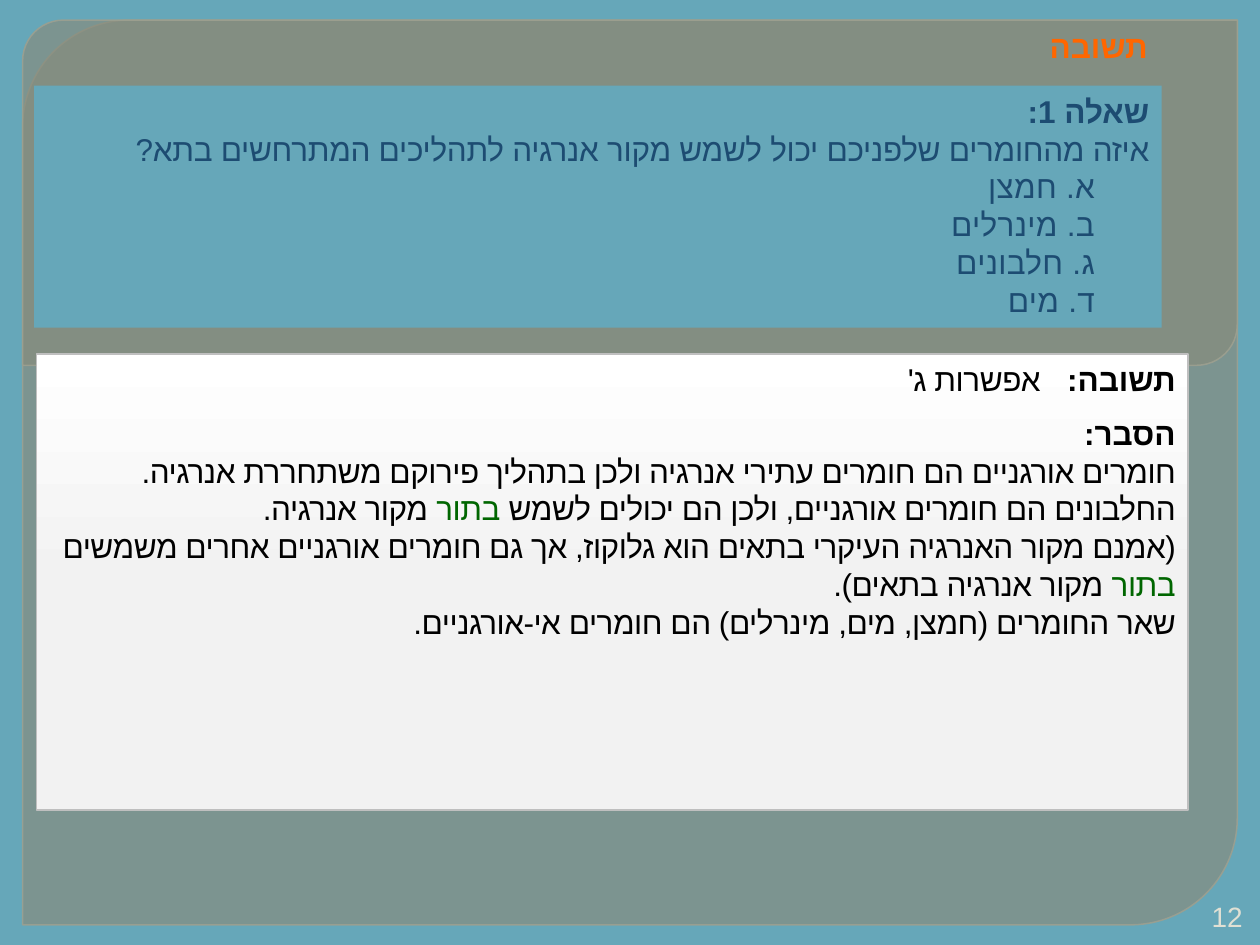
from lxml import etree
from pptx import Presentation
from pptx import util as u
from pptx.dml.color import RGBColor
from pptx.enum import shapes, text
from pptx.oxml.ns import qn

TEAL = RGBColor(0x66, 0xA7, 0xB9)
OLIVE = RGBColor(0x88, 0x8B, 0x7B)
EDGE = RGBColor(0x9D, 0xA0, 0x90)
ORANGE = RGBColor(0xFF, 0x66, 0x00)
NAVY = RGBColor(0x1D, 0x4C, 0x72)
PALE = RGBColor(0xE0, 0xE0, 0xD4)
BLACK = RGBColor(0, 0, 0)
GREEN = RGBColor(0, 0x66, 0)
WHITE = RGBColor(0xFF, 0xFF, 0xFF)
SMOKE = RGBColor(0xF2, 0xF2, 0xF2)
SILVER = RGBColor(0xBF, 0xBF, 0xBF)
SERIF, SANS = "TeX Gyre Bonum", "Arial"

prs = Presentation()
prs.slide_width, prs.slide_height = u.Inches(10), u.Inches(7.5)
s = prs.slides.add_slide(prs.slide_layouts[6])
s.background.fill.solid()
s.background.fill.fore_color.rgb = TEAL


def add_box(kind, left, top, width, height):
    sp = s.shapes.add_shape(kind, *[u.Inches(v) for v in (left, top, width, height)])
    sp.shadow.inherit = False
    sp.line.fill.background()
    sp.text_frame.word_wrap = True
    sp.text_frame.vertical_anchor = text.MSO_ANCHOR.TOP
    return sp


def write_rtl(p, runs, font, size=18, tracking=0):
    p.alignment = text.PP_ALIGN.RIGHT
    p._p.get_or_add_pPr().set("rtl", "1")
    for words, color, bold in runs:
        r = p.add_run()
        r.text = words
        r.font.name, r.font.size, r.font.bold = font, u.Pt(size), bold
        r.font.color.rgb = color
        r.font.language_id = 1037
        r._r.rPr.set("spc", str(0 if bold else tracking))
        etree.SubElement(r._r.rPr, qn("a:cs")).set("typeface", SANS)


for height in (7.18, 2.74):
    panel = add_box(shapes.MSO_SHAPE.ROUND_2_DIAG_RECTANGLE, 0.18, 0.16, 9.64, height)
    panel.adjustments[0], panel.adjustments[1] = 0.118, 0
    panel.fill.solid()
    panel.fill.fore_color.rgb = OLIVE
    panel.line.color.rgb = EDGE
    panel.line.width = u.Pt(0.87)
    for color, alpha in zip(panel._element.spPr.iter(qn("a:srgbClr")), (65000, 88000)):
        etree.SubElement(color, qn("a:alpha")).set("val", str(alpha))

title = s.shapes.add_textbox(*[u.Inches(v) for v in (0.86, 0.08, 8.5, 0.48)])
tf = title.text_frame
tf.word_wrap = True
tf.vertical_anchor = text.MSO_ANCHOR.BOTTOM
tf.margin_left = tf.margin_top = tf.margin_bottom = u.Inches(0.05)
tf.margin_right = u.Inches(0.25)
write_rtl(tf.paragraphs[0], [("תשובה", ORANGE, True)], SERIF)

number = s.shapes.add_textbox(*[u.Inches(v) for v in (9.45, 7.12, 0.51, 0.3)])
tf = number.text_frame
tf.word_wrap = True
tf.vertical_anchor = text.MSO_ANCHOR.MIDDLE
write_rtl(tf.paragraphs[0], [("12", PALE, False)], SERIF, 16)

question = add_box(shapes.MSO_SHAPE.RECTANGLE, 0.27, 0.68, 8.95, 1.92)
question.fill.solid()
question.fill.fore_color.rgb = TEAL
tf = question.text_frame
write_rtl(tf.paragraphs[0], [("שאלה 1:", NAVY, True)], SERIF)
write_rtl(tf.add_paragraph(),
          [("איזה מהחומרים שלפניכם יכול לשמש מקור אנרגיה לתהליכים המתרחשים בתא?", NAVY, False)],
          SERIF, tracking=-16)
for option in ("א. חמצן", "ב. מינרלים", "ג. חלבונים", "ד. מים"):
    p = tf.add_paragraph()
    write_rtl(p, [(option, NAVY, False)], SERIF)
    p._p.pPr.set("marL", str(u.Inches(0.43)))
    p.runs[0]._r.rPr.set("spc", "20")

answer = add_box(shapes.MSO_SHAPE.RECTANGLE, 0.29, 2.81, 9.14, 3.62)
answer.fill.gradient()
answer.fill.gradient_angle = 270
for stop, position, color in zip(answer.fill.gradient_stops, (0, 0.5), (WHITE, SMOKE)):
    stop.position = position
    stop.color.rgb = color
answer.line.color.rgb = SILVER
answer.line.width = u.Pt(1)
tf = answer.text_frame
lines = [
    [("תשובה:", BLACK, True), (" ", BLACK, True), ("אפשרות ג'", BLACK, False)],
    [("הסבר:", BLACK, True)],
    [("חומרים אורגניים הם חומרים עתירי אנרגיה ולכן בתהליך פירוקם משתחררת אנרגיה. "
      "החלבונים הם חומרים אורגניים, ולכן הם יכולים לשמש ", BLACK, False),
     ("בתור", GREEN, False), (" מקור אנרגיה.", BLACK, False)],
    [("(אמנם מקור האנרגיה העיקרי בתאים הוא גלוקוז, אך גם חומרים אורגניים אחרים משמשים ", BLACK, False),
     ("בתור ", GREEN, False), ("מקור אנרגיה בתאים).", BLACK, False)],
    [("שאר החומרים (חמצן, מים, מינרלים) הם חומרים אי-אורגניים.", BLACK, False)],
]
for i, runs in enumerate(lines):
    p = tf.add_paragraph() if i else tf.paragraphs[0]
    write_rtl(p, runs, SANS, tracking=-28)
tf.paragraphs[0].runs[1]._r.rPr.set("spc", "1000")
tf.paragraphs[1].space_before = u.Pt(9)

prs.save("out.pptx")
